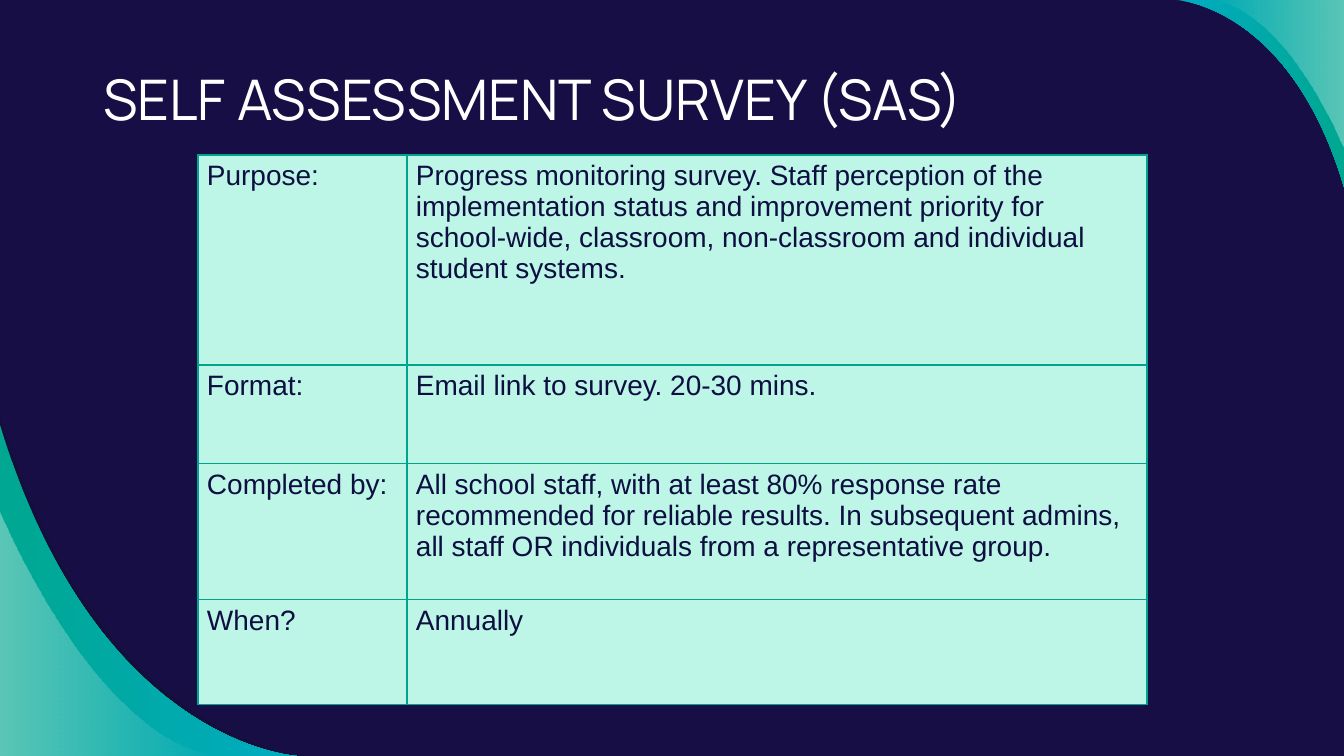
from dataclasses import dataclass

import pptx
import pptx.dml.color
import pptx.enum.text
import pptx.oxml
import pptx.oxml.ns
import pptx.util


@dataclass(frozen=True)
class Theme:
    background: str = "160E44"
    shade: str = "12102F"
    blue: str = "00ACC2"
    green: str = "00A791"
    white: str = "FFFFFF"
    cell: str = "BDF5E6"
    border: str = "00A38E"
    text: str = "0D0F41"
    title_font: str = "Manrope"
    body_font: str = "Arial"
    title_size: int = 30
    body_size: int = 15


THEME = Theme()
WIDTH, HEIGHT = 1344, 756
SCALE = 9144000 / WIDTH


def px(value):
    return pptx.util.Emu(round(value * SCALE))


def color(name):
    return pptx.dml.color.RGBColor.from_string(name)


presentation = pptx.Presentation()
presentation.slide_width, presentation.slide_height = px(WIDTH), px(HEIGHT)
slide = presentation.slides.add_slide(presentation.slide_layouts[5])
slide.background.fill.solid()
slide.background.fill.fore_color.rgb = color(THEME.background)

# Corner waves: Bezier points, then (colour, opacity %) from left to right
bottom_left = ((0, HEIGHT), [
    ([(0, 417), (98, 745), (305, 756), (305, 756)], [(THEME.shade, 54)]),
    ([(0, 425), (97, 746), (297, 756), (297, 756)],
     [(THEME.green, 100), (THEME.blue, 100)]),
    ([(0, 511), (0, 511), (93, 741), (218, 756)],
     [(THEME.white, 36), (THEME.white, 0)]),
])
top_right = ((WIDTH, 0), [
    ([(1176, 0), (1176, 0), (1290, 5), (1344, 187)],
     [(THEME.blue, 100), (THEME.green, 100)]),
    ([(1211, 0), (1288, 9), (1344, 151), (1344, 151)],
     [(THEME.white, 0), (THEME.white, 36)]),
])
for corner, waves in (bottom_left, top_right):
    group = slide.shapes.add_group_shape()
    for curve, stops in waves:
        points = [(px(x), px(y)) for x, y in curve + [corner]]
        builder = group.shapes.build_freeform(*points[0])
        builder.add_line_segments(points[1:], close=True)
        wave = builder.convert_to_shape()

        # The first three segments become one Bezier curve
        lines = list(wave._element.iter(pptx.oxml.ns.qn("a:lnTo")))[:3]
        bezier = pptx.oxml.parse_xml(f'<a:cubicBezTo {pptx.oxml.ns.nsdecls("a")}/>')
        lines[0].addprevious(bezier)
        for line in lines:
            bezier.append(line[0])
            line.getparent().remove(line)

        wave.shadow.inherit = False
        wave.line.fill.background()
        if len(stops) == 1:
            wave.fill.solid()
            wave.fill.fore_color.rgb = color(stops[0][0])
        else:
            wave.fill.gradient()
            wave.fill.gradient_angle = 0
            for stop, (name, _) in zip(wave.fill.gradient_stops, stops):
                stop.color.rgb = color(name)
        fill_colors = list(wave._element.spPr.iter(pptx.oxml.ns.qn("a:srgbClr")))
        for element, (_, opacity) in zip(fill_colors, stops):
            if opacity < 100:
                element.append(pptx.oxml.parse_xml(
                    f'<a:alpha {pptx.oxml.ns.nsdecls("a")} val="{opacity * 1000}"/>'))

# Title, in front of the waves
title = slide.shapes.title
slide.shapes._spTree.append(title._element)
title.left, title.top, title.width, title.height = px(90), px(52), px(1034), px(92)
frame = title.text_frame
frame.auto_size = pptx.enum.text.MSO_AUTO_SIZE.NONE
frame.word_wrap = True
frame.vertical_anchor = pptx.enum.text.MSO_ANCHOR.MIDDLE
frame.margin_left = frame.margin_right = frame.margin_top = frame.margin_bottom = px(13)
paragraph = frame.paragraphs[0]
paragraph.alignment = pptx.enum.text.PP_ALIGN.LEFT
paragraph.line_spacing = 1.0
run = paragraph.add_run()
run.text = "SELF ASSESSMENT SURVEY (SAS)"
run.font.name = THEME.title_font
run.font.size = pptx.util.Pt(THEME.title_size)
run.font.color.rgb = color(THEME.white)

# Survey table
rows = [
    ("Purpose:", "Progress monitoring survey. Staff perception of the implementation status "
     "and improvement priority for school-wide, classroom, non-classroom and individual "
     "student systems."),
    ("Format:", "Email link to survey. 20-30 mins."),
    ("Completed by:", "All school staff, with at least 80% response rate recommended for "
     "reliable results. In subsequent admins, all staff OR individuals from a "
     "representative group."),
    ("When?", "Annually"),
]
column_widths = [209, 740]
row_heights = [210, 99, 136, 105]
table = slide.shapes.add_table(
    len(rows), len(column_widths), px(198), px(155),
    px(sum(column_widths)), px(sum(row_heights))).table
table.first_row = table.horz_banding = False
for column, width in zip(table.columns, column_widths):
    column.width = px(width)
for row, height, texts in zip(table.rows, row_heights, rows):
    row.height = px(height)
    for cell, text in zip(row.cells, texts):
        cell.margin_left = cell.margin_right = px(9)
        cell.margin_top = cell.margin_bottom = px(5)
        cell.fill.solid()
        cell.fill.fore_color.rgb = color(THEME.cell)
        properties = cell._tc.get_or_add_tcPr()
        for index, side in enumerate(("lnL", "lnR", "lnT", "lnB")):
            properties.insert(index, pptx.oxml.parse_xml(
                f'<a:{side} {pptx.oxml.ns.nsdecls("a")} w="{pptx.util.Pt(0.75)}">'
                f'<a:solidFill><a:srgbClr val="{THEME.border}"/></a:solidFill></a:{side}>'))
        run = cell.text_frame.paragraphs[0].add_run()
        run.text = text
        run.font.name = THEME.body_font
        run.font.size = pptx.util.Pt(THEME.body_size)
        run.font.color.rgb = color(THEME.text)

presentation.save("out.pptx")
